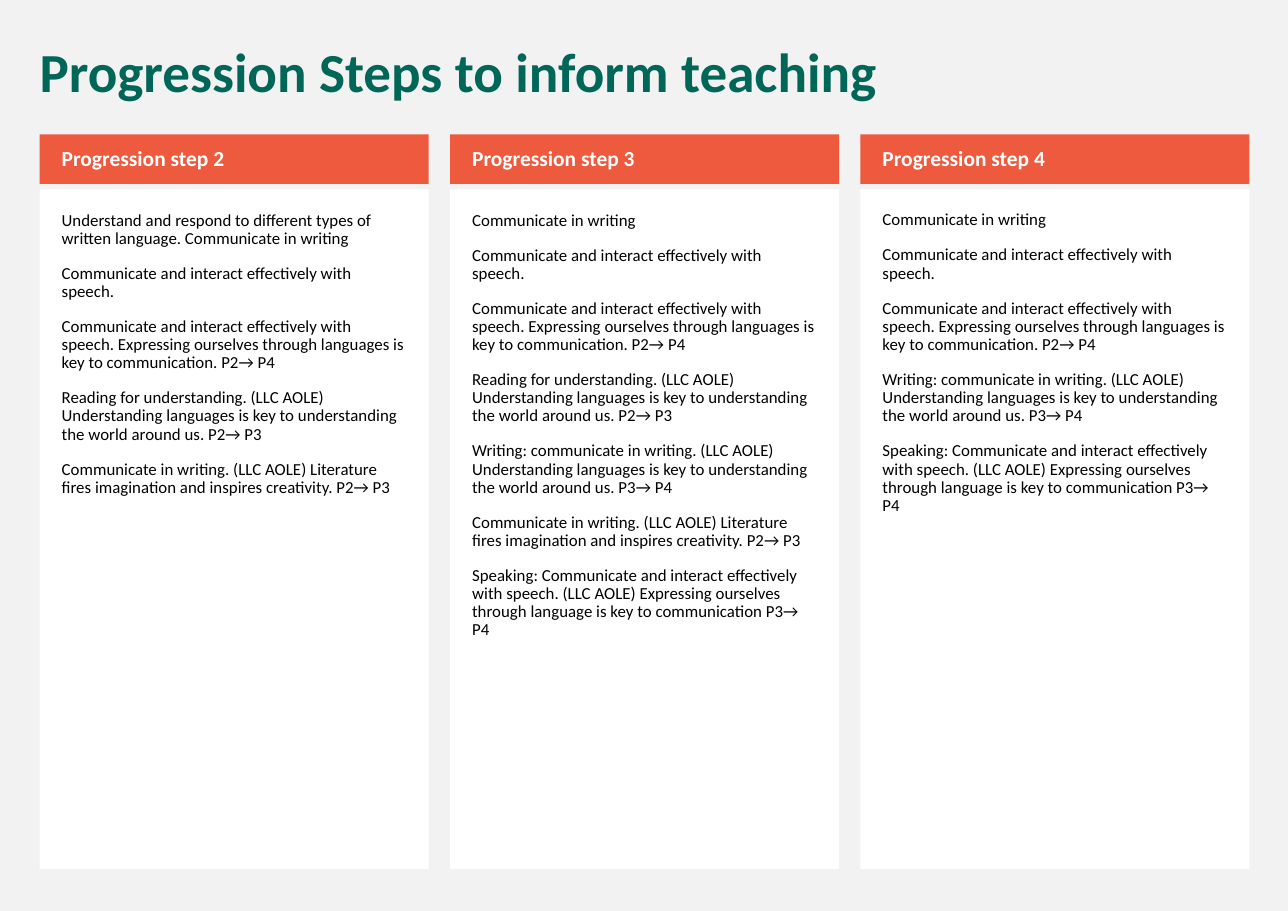
from lxml.etree import SubElement
from pptx import Presentation
from pptx.dml.color import RGBColor
from pptx.enum.shapes import MSO_SHAPE
from pptx.enum.text import MSO_ANCHOR as Anchor, MSO_AUTO_SIZE as AutoSize, PP_ALIGN as Align
from pptx.oxml.ns import qn
from pptx.util import Pt

COLORS = {
    "background": "F2F2F2",
    "title": "006758",
    "header": "ED5A3E",
    "white": "FFFFFF",
    "text": "000000",
}
FONT = "Calibri"
LEFT, PITCH, COLUMN_WIDTH = 25.92, 268.2, 254.2
HEADER_TOP, HEADER_HEIGHT = 87.8, 32.4
BODY_TOP, BODY_HEIGHT = 123.8, 444.2
HEADER_INSETS = (14.4, 3.6, 7.2, 3.6)
BODY_INSETS = (14.4,) * 4

WRITING = "Communicate in writing"
SPEECH = "Communicate and interact effectively with speech."
EXPRESSING = SPEECH + " Expressing ourselves through languages is key to communication. P2→ P4"
WORLD = "(LLC AOLE) Understanding languages is key to understanding the world around us."
READING = f"Reading for understanding. {WORLD} P2→ P3"
WRITING_STEP = f"Writing: communicate in writing. {WORLD} P3→ P4"
LITERATURE = (
    "Communicate in writing. (LLC AOLE) Literature fires imagination "
    "and inspires creativity. P2→ P3"
)
SPEAKING = (
    "Speaking: Communicate and interact effectively with speech. (LLC AOLE) "
    "Expressing ourselves through language is key to communication P3→ P4"
)
STEPS = [
    ("Progression step 2", [
        "Understand and respond to different types of written language. " + WRITING,
        SPEECH, EXPRESSING, READING, LITERATURE,
    ]),
    ("Progression step 3", [
        WRITING, SPEECH, EXPRESSING, READING, WRITING_STEP, LITERATURE, SPEAKING,
    ]),
    ("Progression step 4", [WRITING, SPEECH, EXPRESSING, WRITING_STEP, SPEAKING]),
]


def color(name):
    return RGBColor.from_string(COLORS[name])


def place(shape, left, top, width, height):
    shape.left, shape.top = Pt(left), Pt(top)
    shape.width, shape.height = Pt(width), Pt(height)


def paint(shape, fill):
    shape.fill.solid()
    shape.fill.fore_color.rgb = color(fill)
    shape.line.fill.background()


def write(shape, lines, size, ink, bold=False, anchor=Anchor.TOP, insets=(7.2, 3.6, 7.2, 3.6)):
    frame = shape.text_frame
    frame.word_wrap = True
    frame.auto_size = AutoSize.NONE
    frame.vertical_anchor = anchor
    frame.margin_left, frame.margin_top, frame.margin_right, frame.margin_bottom = map(Pt, insets)
    for index, line in enumerate(lines):
        paragraph = frame.add_paragraph() if index else frame.paragraphs[0]
        paragraph.alignment = Align.LEFT
        paragraph.line_spacing = 0.9
        paragraph.space_before = Pt(11)
        properties = paragraph._p.get_or_add_pPr()
        properties.set("marL", "0")
        properties.set("indent", "0")
        SubElement(properties, qn("a:buNone"))
        run = paragraph.add_run()
        run.text = line
        run.font.name = FONT
        run.font.size = Pt(size)
        run.font.bold = bold
        run.font.color.rgb = color(ink)


def add_panel(slide):
    shape = slide.shapes.add_shape(MSO_SHAPE.RECTANGLE, 0, 0, 0, 0)
    shape.shadow.inherit = False
    return shape


def fill_column(header, body, left, heading, lines):
    place(header, left, HEADER_TOP, COLUMN_WIDTH, HEADER_HEIGHT)
    paint(header, "header")
    write(header, [heading], 14, "white", True, Anchor.MIDDLE, HEADER_INSETS)
    place(body, left, BODY_TOP, COLUMN_WIDTH, BODY_HEIGHT)
    paint(body, "white")
    write(body, lines, 11, "text", insets=BODY_INSETS)


def main():
    """Build the slide of progression steps in three columns."""
    presentation = Presentation()
    presentation.slide_width, presentation.slide_height = Pt(841.7), Pt(595.4)
    slide = presentation.slides.add_slide(presentation.slide_layouts.get_by_name("Comparison"))
    slide.background.fill.solid()
    slide.background.fill.fore_color.rgb = color("background")

    title = slide.shapes.title
    place(title, 18.7, 25.9, 797.8, 46.8)
    write(title, ["Progression Steps to inform teaching"], 36, "title", True)

    holders = slide.placeholders
    columns = [
        (holders[1], holders[2]),
        (holders[3], holders[4]),
        (add_panel(slide), add_panel(slide)),
    ]
    for index, ((header, body), (heading, lines)) in enumerate(zip(columns, STEPS)):
        fill_column(header, body, LEFT + index * PITCH, heading, lines)

    presentation.save("out.pptx")


if __name__ == "__main__":
    main()
